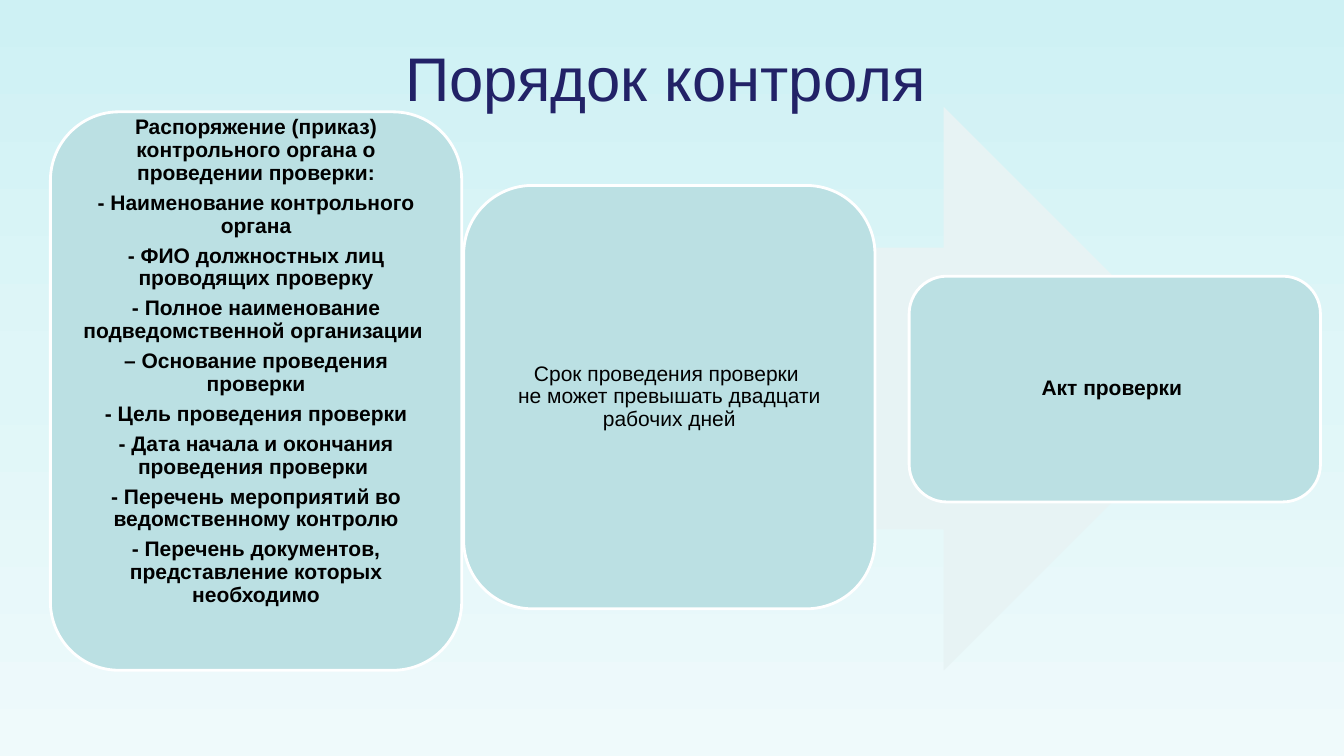
import copy
from dataclasses import dataclass

import pptx
import pptx.dml.color
import pptx.enum.shapes
import pptx.enum.text
import pptx.util

Pt = pptx.util.Pt
RGB = pptx.dml.color.RGBColor.from_string
Shapes = pptx.enum.shapes.MSO_SHAPE


@dataclass(frozen=True)
class Theme:
    font: str = "Arial"
    title_size: float = 44
    body_size: float = 15
    title_color: str = "222267"
    body_color: str = "000000"
    arrow: str = "E7F3F4"
    box: str = "BBE0E3"
    outline: str = "FFFFFF"
    background: tuple[str, ...] = ("CEF1F4", "DFF6F8", "EFFAFB")


@dataclass(frozen=True)
class Stage:
    left: float
    top: float
    height: float
    lines: tuple[str, ...]
    bold: bool = True
    bottom_inset: float = 4.3


THEME = Theme()
STAGE_WIDTH = 293.8
INSET = 4.3

STAGES = (
    Stage(36, 79.9, 398.9, (
        "Распоряжение (приказ) контрольного органа о проведении проверки:",
        "- Наименование контрольного органа",
        "- ФИО должностных лиц проводящих проверку",
        "- Полное наименование подведомственной организации ",
        "– Основание проведения проверки",
        "- Цель проведения проверки",
        "- Дата начала и окончания проведения проверки ",
        "- Перечень мероприятий во ведомственному контролю",
        "- Перечень документов, представление которых необходимо",
    ), bottom_inset=46),
    Stage(331.2, 132.5, 302.4, (
        "Срок проведения проверки \vне может превышать двадцати рабочих дней",
    ), bold=False),
    Stage(649.4, 197.3, 161.3, ("Акт проверки ",)),
)


def write_text(text_frame, lines: tuple[str, ...], *, size: float, color: str,
               bold: bool = False, line_spacing: float = 1, space_after: float = 0) -> None:
    text_frame.word_wrap = True
    text_frame.auto_size = pptx.enum.text.MSO_AUTO_SIZE.NONE
    text_frame.vertical_anchor = pptx.enum.text.MSO_ANCHOR.MIDDLE
    for index, line in enumerate(lines):
        paragraph = text_frame.add_paragraph() if index else text_frame.paragraphs[0]
        paragraph.text = line
        paragraph.alignment = pptx.enum.text.PP_ALIGN.CENTER
        paragraph.line_spacing = line_spacing
        paragraph.space_after = Pt(space_after)
        for run in paragraph.runs:
            run.font.name = THEME.font
            run.font.size = Pt(size)
            run.font.bold = bold
            run.font.color.rgb = RGB(color)


def paint_background(slide) -> None:
    fill = slide.background.fill
    fill.gradient()
    fill.gradient_angle = 270
    stop_list = slide.element.xpath(".//a:gsLst")[0]
    stop_list.append(copy.deepcopy(stop_list[-1]))
    last = len(THEME.background) - 1
    for index, stop in enumerate(fill.gradient_stops):
        stop.position = index / last
        stop.color.rgb = RGB(THEME.background[index])


def add_filled_shape(slide, kind, left: float, top: float, width: float,
                     height: float, color: str):
    shape = slide.shapes.add_shape(kind, Pt(left), Pt(top), Pt(width), Pt(height))
    shape.shadow.inherit = False
    shape.fill.solid()
    shape.fill.fore_color.rgb = RGB(color)
    shape.line.fill.background()
    return shape


def add_stage(slide, stage: Stage) -> None:
    shape = add_filled_shape(slide, Shapes.ROUNDED_RECTANGLE, stage.left, stage.top,
                             STAGE_WIDTH, stage.height, THEME.box)
    shape.line.color.rgb = RGB(THEME.outline)
    shape.line.width = Pt(2)
    text_frame = shape.text_frame
    text_frame.margin_left = text_frame.margin_right = text_frame.margin_top = Pt(INSET)
    text_frame.margin_bottom = Pt(stage.bottom_inset)
    write_text(text_frame, stage.lines, size=THEME.body_size, color=THEME.body_color,
               bold=stage.bold, line_spacing=0.9, space_after=5.25)


def main() -> None:
    presentation = pptx.Presentation()
    presentation.slide_width = Pt(960)
    presentation.slide_height = Pt(540)
    slide = presentation.slides.add_slide(presentation.slide_layouts.get_by_name("Title Only"))
    paint_background(slide)

    title = slide.shapes.title
    title.left, title.top, title.width, title.height = Pt(49.7), Pt(10), Pt(864), Pt(90)
    write_text(title.text_frame, ("Порядок контроля ",),
               size=THEME.title_size, color=THEME.title_color)

    add_filled_shape(slide, Shapes.RIGHT_ARROW, 100, 76.3, 775.4, 402.5, THEME.arrow)
    for stage in STAGES:
        add_stage(slide, stage)

    presentation.save("out.pptx")


if __name__ == "__main__":
    main()
